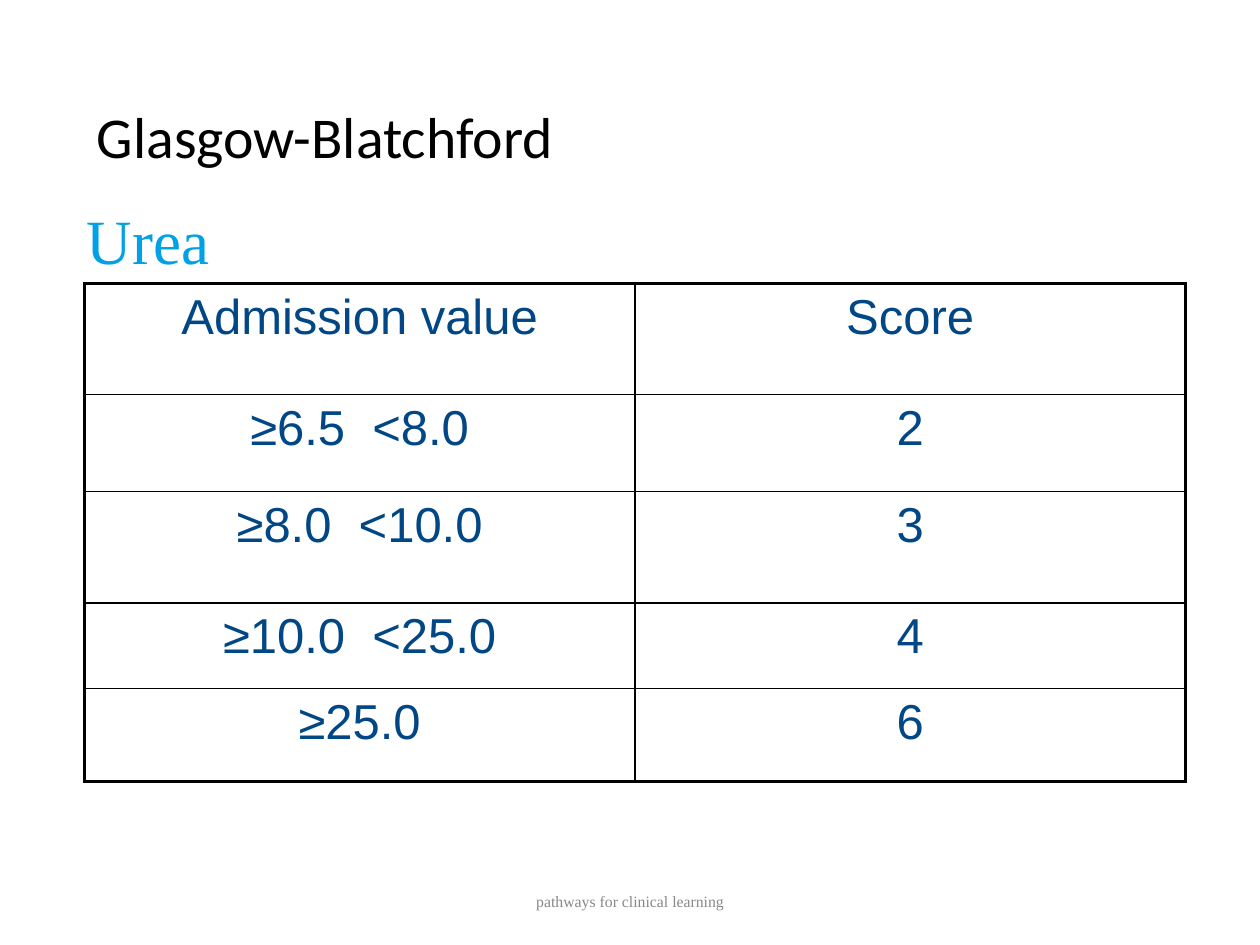
from pptx import Presentation
from pptx.dml.color import RGBColor
from pptx.enum.text import MSO_ANCHOR as Anchor, PP_ALIGN as Align
from pptx.oxml.ns import qn
from pptx.util import Pt
from lxml.etree import SubElement

TITLE = "Glasgow-Blatchford"
SUBTITLE = "Urea"
FOOTER = "pathways for clinical learning"
ROWS = [
    ("Admission value", "Score"),
    ("≥6.5  <8.0", "2"),
    ("≥8.0  <10.0", "3"),
    ("≥10.0  <25.0", "4"),
    ("≥25.0", "6"),
]
ROW_HEIGHTS = [63.5, 55.5, 63.5, 49, 53]
COLUMN_WIDTH = 314.6
LEFT = 48.2
TABLE_TOP = 162
OUTER_LINE, INNER_LINE = 2.25, 1

BLACK = RGBColor(0x00, 0x00, 0x00)
NAVY = RGBColor(0x01, 0x47, 0x85)
CYAN = RGBColor(0x00, 0xA1, 0xE5)
GRAY = RGBColor(0x88, 0x88, 0x88)


def write(frame, text, font, size, color, align=Align.LEFT):
    paragraph = frame.paragraphs[0]
    paragraph.alignment = align
    run = paragraph.add_run()
    run.text = text
    run.font.name = font
    run.font.size = Pt(size)
    run.font.color.rgb = color
    return paragraph


def add_text(slide, box, anchor, *text_format):
    shape = slide.shapes.add_textbox(*map(Pt, box))
    shape.text_frame.word_wrap = True
    shape.text_frame.vertical_anchor = anchor
    write(shape.text_frame, *text_format)


def set_borders(cell, widths):
    properties = cell._tc.get_or_add_tcPr()
    for index, (side, width) in enumerate(widths.items()):
        line = properties.makeelement(qn(f"a:ln{side}"), {"w": str(Pt(width))})
        fill = SubElement(line, qn("a:solidFill"))
        SubElement(fill, qn("a:srgbClr"), val=str(BLACK))
        properties.insert(index, line)


def add_score_table(slide):
    row_count, column_count = len(ROWS), len(ROWS[0])
    table = slide.shapes.add_table(
        row_count, column_count, Pt(LEFT), Pt(TABLE_TOP),
        Pt(COLUMN_WIDTH * column_count), Pt(sum(ROW_HEIGHTS))).table
    table.first_row = table.horz_banding = False
    for column in table.columns:
        column.width = Pt(COLUMN_WIDTH)
    for r, (values, height) in enumerate(zip(ROWS, ROW_HEIGHTS)):
        table.rows[r].height = Pt(height)
        for c, value in enumerate(values):
            cell = table.cell(r, c)
            cell.fill.background()
            write(cell.text_frame, value, "Arial", 28, NAVY, Align.CENTER)
            on_edge = {"L": c == 0, "R": c == column_count - 1,
                       "T": r == 0, "B": r == row_count - 1}
            set_borders(cell, {side: OUTER_LINE if edge else INNER_LINE
                               for side, edge in on_edge.items()})


def main():
    presentation = Presentation()
    presentation.slide_width, presentation.slide_height = Pt(720), Pt(540)
    slide = presentation.slides.add_slide(presentation.slide_layouts[5])

    title = slide.shapes.title
    title.left, title.top, title.width, title.height = map(Pt, (LEFT, 43.2, 629.2, 73.4))
    title.text_frame.vertical_anchor = Anchor.MIDDLE
    write(title.text_frame, TITLE, "Calibri", 33, BLACK).line_spacing = 0.9

    add_score_table(slide)
    add_text(slide, (42.5, 111.6, 244, 50.4), Anchor.TOP,
             SUBTITLE, "Times New Roman", 36, CYAN)
    add_text(slide, (238.3, 500.4, 243.4, 28.8), Anchor.MIDDLE,
             FOOTER, "Times New Roman", 9, GRAY, Align.CENTER)

    presentation.save("out.pptx")


if __name__ == "__main__":
    main()
